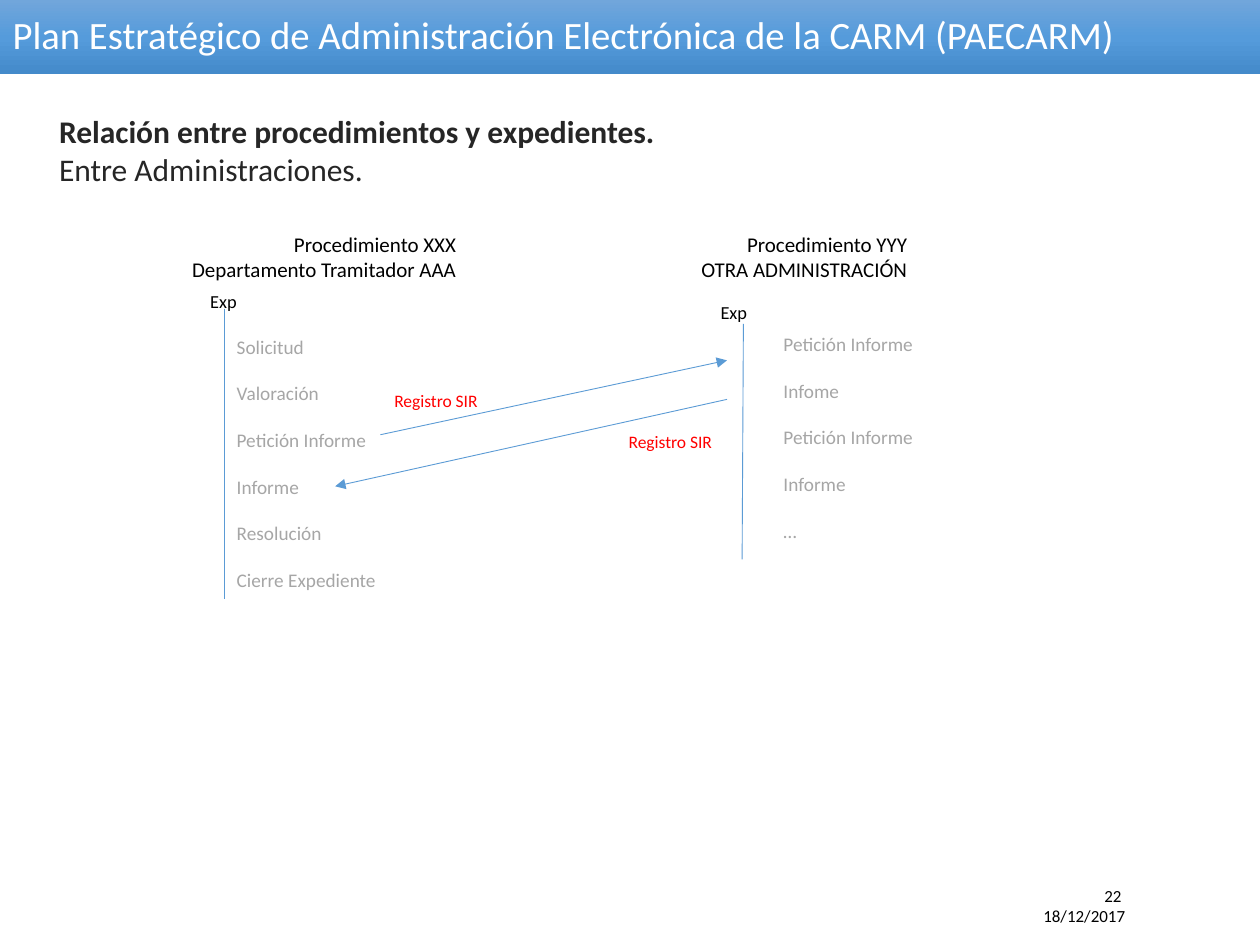
from copy import deepcopy

from pptx import Presentation
from pptx.dml.color import RGBColor
from pptx.enum.shapes import MSO_CONNECTOR
from pptx.enum.text import MSO_ANCHOR, MSO_AUTO_SIZE, PP_ALIGN
from pptx.oxml.ns import qn
from pptx.util import Inches, Pt
from lxml.etree import SubElement

COLS, ROWS = 100, 75
COLORS = {
    "white": "FFFFFF", "black": "000000", "dark": "262626", "step": "A6A6A6",
    "registry": "FF0000", "line": "5B9BD5",
    "bar_top": "71A6DB", "bar_mid": "559BDB", "bar_end": "448ACA",
}


class Deck:
    font = "Calibri"

    def __init__(self, prs):
        self.prs = prs
        self.slide = prs.slides.add_slide(prs.slide_layouts[5])

    def x(self, col):
        return round(self.prs.slide_width * col / COLS)

    def y(self, row):
        return round(self.prs.slide_height * row / ROWS)

    def color(self, name):
        return RGBColor.from_string(COLORS[name])

    def run(self, p, text, size, color, bold=False):
        r = p.add_run()
        r.text = text
        r.font.name, r.font.size, r.font.bold = self.font, Pt(size), bold
        r.font.color.rgb = self.color(color)

    def title(self, text, height, size):
        s = self.slide.shapes.title
        s.left, s.top, s.width, s.height = 0, 0, self.x(COLS), self.y(height)
        s.fill.gradient()
        s.fill.gradient_angle = 270
        stops = s._element.spPr.find(".//" + qn("a:gsLst"))
        stops.insert(1, deepcopy(stops[0]))
        names = ("bar_top", "bar_mid", "bar_end")
        for i, (stop, name) in enumerate(zip(s.fill.gradient_stops, names)):
            stop.color.rgb = self.color(name)
            stop.position = i / 2
        tf = s.text_frame
        tf.auto_size, tf.word_wrap = MSO_AUTO_SIZE.NONE, True
        tf.vertical_anchor = MSO_ANCHOR.MIDDLE
        p = tf.paragraphs[0]
        p.alignment, p.line_spacing = PP_ALIGN.LEFT, 0.9
        self.run(p, text, size, "white")

    def text(self, box, lines, size, color, align=PP_ALIGN.LEFT,
             wrap=False, gap=0, bold_first=False):
        col, row, width, height = box
        s = self.slide.shapes.add_textbox(
            self.x(col), self.y(row), self.x(width), self.y(height))
        tf = s.text_frame
        tf.word_wrap, tf.auto_size = wrap, MSO_AUTO_SIZE.SHAPE_TO_FIT_TEXT
        for i, line in enumerate(lines):
            p = tf.add_paragraph() if i else tf.paragraphs[0]
            p.alignment = align
            if i and gap:
                p.space_before = Pt(gap)
            self.run(p, line, size, color, bold_first and i == 0)

    def line(self, start, end, arrow=False):
        s = self.slide.shapes.add_connector(
            MSO_CONNECTOR.STRAIGHT, self.x(start[0]), self.y(start[1]),
            self.x(end[0]), self.y(end[1]))
        s.line.color.rgb, s.line.width = self.color("line"), Pt(0.5)
        if arrow:
            SubElement(s.line._get_or_add_ln(), qn("a:tailEnd"), type="triangle")
        SubElement(s._element.spPr, qn("a:effectLst"))


def main():
    prs = Presentation()
    prs.slide_width, prs.slide_height = Inches(10), Inches(7.5)
    deck = Deck(prs)

    deck.title("Plan Estratégico de Administración Electrónica de la CARM (PAECARM)",
               5.9, 22.1)
    deck.text((3.7, 8.4, 50.2, 7.1),
              ["Relación entre procedimientos y expedientes.", "Entre Administraciones."],
              18, "dark", bold_first=True)

    procedures = [
        ((13.6, 17.9, 23.6, 5), ["Procedimiento XXX", "Departamento Tramitador AAA"]),
        ((50, 17.9, 23, 5), ["Procedimiento YYY", "OTRA ADMINISTRACIÓN"]),
    ]
    for box, lines in procedures:
        deck.text(box, lines, 12, "black", PP_ALIGN.RIGHT, wrap=True)

    steps = [
        ((17.8, 26.1, 13.2, 25.1), ["Solicitud", "Valoración", "Petición Informe",
                                    "Informe", "Resolución", "Cierre Expediente"]),
        ((61.2, 25.9, 12.4, 17.7), ["Petición Informe", "Infome", "Petición Informe",
                                    "Informe", "…"]),
    ]
    for box, lines in steps:
        deck.text(box, lines, 11, "step", gap=13.4)

    deck.line((17.8, 24.5), (17.8, 47.5))
    deck.line((59, 25.7), (58.9, 44.4))
    deck.line((30.2, 34.5), (57.7, 28.6), arrow=True)
    deck.line((57.7, 31.7), (26.6, 38.6), arrow=True)

    for col, row in ((30.2, 30.5), (48.8, 33.7)):
        deck.text((col, row, 8.8, 2.7), ["Registro SIR"], 10, "registry", PP_ALIGN.CENTER)
    for col, row in ((15.7, 22.5), (56.2, 23.4)):
        deck.text((col, row, 4.5, 2.8), ["Exp"], 10.5, "black")

    deck.text((71.3, 69.8, 19, 4.3), ["22 ", "18/12/2017"], 9.7, "black",
              PP_ALIGN.RIGHT, wrap=True)
    prs.save("out.pptx")


if __name__ == "__main__":
    main()
